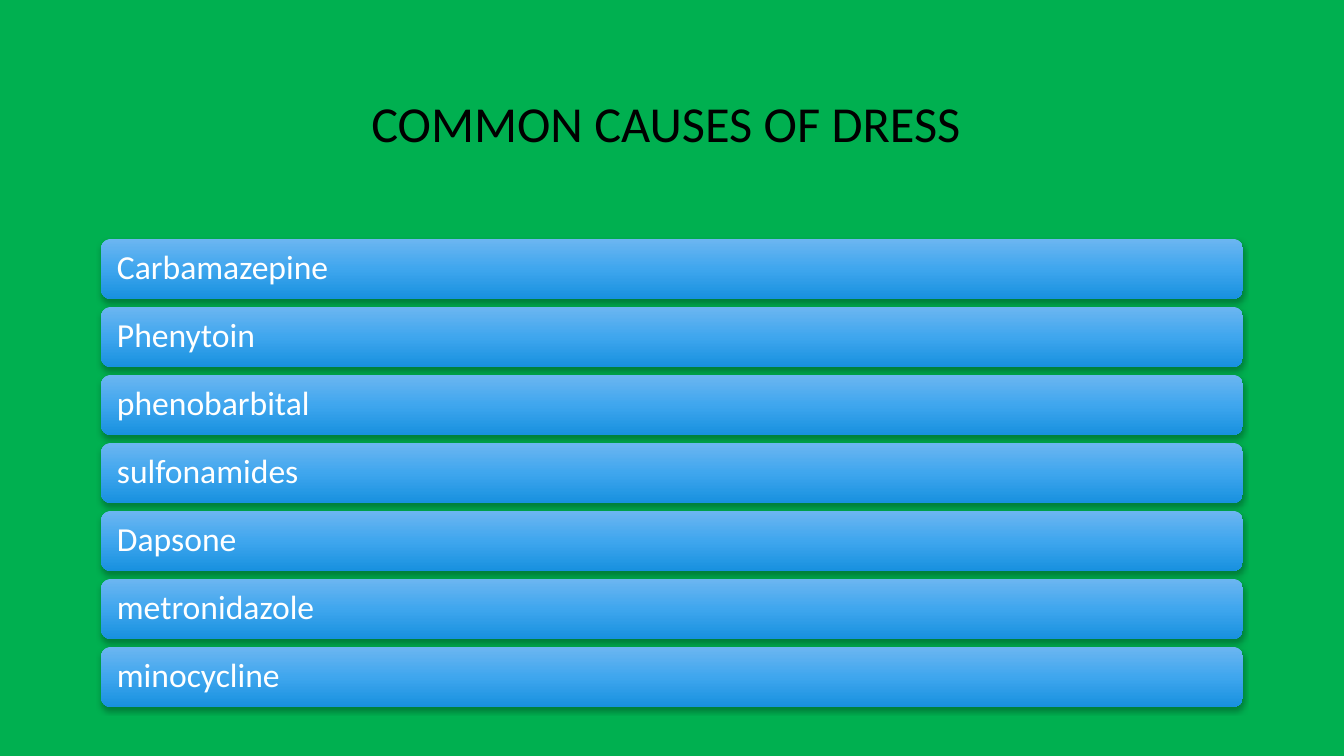
from lxml.etree import SubElement
from pptx import Presentation
from pptx.dml.color import RGBColor
from pptx.enum.shapes import MSO_SHAPE
from pptx.enum.text import MSO_ANCHOR, PP_ALIGN
from pptx.oxml.ns import qn
from pptx.util import Pt

PX = 12192000 / 1344
HUES = {"back": "00B050", "title": "000000", "text": "FFFFFF", "shade": "000000",
        "top": "6CB6F1", "mid": "3FA6EE", "base": "1891DF"}
CAUSES = ["Carbamazepine", "Phenytoin", "phenobarbital", "sulfonamides",
          "Dapsone", "metronidazole", "minocycline"]


def px(count):
    return round(count * PX)


def write(shape, text, size, hue, align=PP_ALIGN.LEFT, pad=(10, 5, 10, 5)):
    frame = shape.text_frame
    frame.word_wrap = True
    frame.vertical_anchor = MSO_ANCHOR.MIDDLE
    frame.margin_left, frame.margin_top, frame.margin_right, frame.margin_bottom = map(px, pad)
    para = frame.paragraphs[0]
    para.text = text
    para.alignment = align
    para.line_spacing = 0.9
    para.font.name = "Calibri"
    para.font.size = Pt(size)
    para.font.color.rgb = RGBColor.from_string(HUES[hue])


# Slide and background
deck = Presentation()
deck.slide_width, deck.slide_height = px(1344), px(756)
slide = deck.slides.add_slide(deck.slide_layouts[5])
slide.background.fill.solid()
slide.background.fill.fore_color.rgb = RGBColor.from_string(HUES["back"])

# Title, raised above the middle of its box
title = slide.shapes.title
title.left, title.top, title.width, title.height = px(101), px(69), px(1142), px(176)
write(title, "COMMON CAUSES OF DRESS", 36, "title", PP_ALIGN.CENTER, (10, 5, 22, 67))

# One bar for each cause
for row, cause in enumerate(CAUSES):
    bar = slide.shapes.add_shape(MSO_SHAPE.ROUNDED_RECTANGLE,
                                 px(101), px(239 + 68 * row), px(1142), px(60))
    bar.line.fill.background()
    write(bar, cause, 24, "text", pad=(13, 10, 13, 10))

    # Three-stop gradient from top to bottom
    bar.fill.gradient()
    grad = bar.element.spPr.find(qn("a:gradFill"))
    stops = grad.find(qn("a:gsLst"))
    for old in list(stops):
        stops.remove(old)
    for place, hue in ((0, "top"), (50000, "mid"), (100000, "base")):
        stop = SubElement(stops, qn("a:gs"), pos=str(place))
        SubElement(stop, qn("a:srgbClr"), val=HUES[hue])
    grad.find(qn("a:lin")).set("ang", "5400000")

    # Soft shadow below
    bar.shadow.inherit = False
    glow = SubElement(bar.element.spPr.find(qn("a:effectLst")), qn("a:outerShdw"),
                      blurRad=str(Pt(4)), dist=str(Pt(2)), dir="5400000",
                      algn="ctr", rotWithShape="0")
    shade = SubElement(glow, qn("a:srgbClr"), val=HUES["shade"])
    SubElement(shade, qn("a:alpha"), val="28000")

deck.save("out.pptx")
